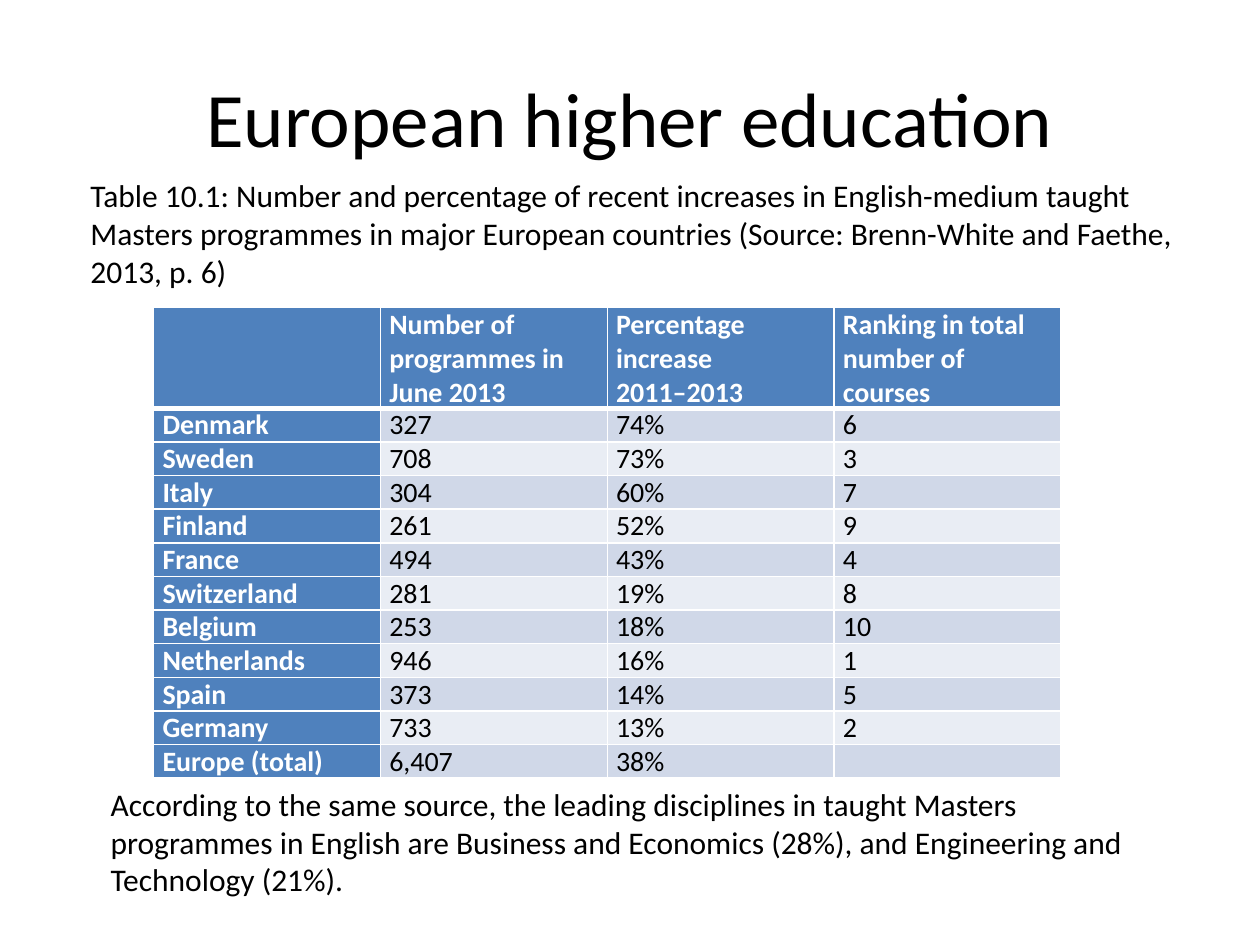
from copy import deepcopy

from lxml.etree import SubElement
from pptx import Presentation
from pptx.dml.color import RGBColor
from pptx.enum.text import MSO_ANCHOR, PP_ALIGN
from pptx.oxml.ns import qn
from pptx.util import Inches, Pt

BLACK = RGBColor(0x00, 0x00, 0x00)
WHITE = RGBColor(0xFF, 0xFF, 0xFF)
BLUE = RGBColor(0x4F, 0x81, 0xBD)
BANDS = RGBColor(0xD0, 0xD8, 0xE8), RGBColor(0xE9, 0xED, 0xF4)
FONT = "Calibri"

TITLE = "European higher education"
CAPTION = (
    "Table 10.1: Number and percentage of recent increases in English-medium taught "
    "Masters programmes in major European countries (Source: Brenn-White and Faethe, 2013, p. 6)"
)
CONCLUSION = (
    "According to the same source, the leading disciplines in taught Masters programmes "
    "in English are Business and Economics (28%), and Engineering and Technology (21%)."
)
# In cell text, \n starts a paragraph and \v breaks a line.
ROWS = [
    ("", "Number of programmes in\nJune 2013", "Percentage increase\v2011–2013",
     "Ranking in total number of courses"),
    ("Denmark", "327", "74%", "6"),
    ("Sweden", "708", "73%", "3"),
    ("Italy", "304", "60%", "7"),
    ("Finland", "261", "52%", "9"),
    ("France", "494", "43%", "4"),
    ("Switzerland", "281", "19%", "8"),
    ("Belgium", "253", "18%", "10"),
    ("Netherlands", "946", "16%", "1"),
    ("Spain", "373", "14%", "5"),
    ("Germany", "733", "13%", "2"),
    ("Europe (total)", "6,407", "38%", ""),
]
TABLE_LEFT, TABLE_TOP, TABLE_HEIGHT = 1.22, 2.44, 3.73
COLUMN_WIDTH, HEADER_HEIGHT = 1.8, 0.79


def write_text(frame, text, size=18, color=BLACK, bold=False, align=PP_ALIGN.LEFT):
    frame.word_wrap = True
    for index, line in enumerate(text.split("\n")):
        paragraph = frame.add_paragraph() if index else frame.paragraphs[0]
        paragraph.text = line
        paragraph.alignment = align
        for run in paragraph.runs:
            run.font.name = FONT
            run.font.size = Pt(size)
            run.font.bold = bold
            run.font.color.rgb = color
        for line_break in paragraph._p.findall(qn("a:br")):
            line_break.append(deepcopy(paragraph.runs[0].font._element))
        if not line:
            SubElement(paragraph._p, qn("a:endParaRPr"), sz=str(size * 100))


def add_text(slide, left, top, width, height, text, anchor=MSO_ANCHOR.TOP, **text_format):
    box = slide.shapes.add_textbox(Inches(left), Inches(top), Inches(width), Inches(height))
    write_text(box.text_frame, text, **text_format)
    box.text_frame.vertical_anchor = anchor


def set_borders(cell, **widths):
    """Draw white borders; widths are points keyed by side (L, R, T, B)."""
    properties = cell._tc.get_or_add_tcPr()
    for index, (side, width) in enumerate(widths.items()):
        line = properties.makeelement(qn(f"a:ln{side}"), w=str(Pt(width)))
        fill = SubElement(line, qn("a:solidFill"))
        SubElement(fill, qn("a:srgbClr"), val=str(WHITE))
        properties.insert(index, line)


def add_table(slide):
    row_count, column_count = len(ROWS), len(ROWS[0])
    table = slide.shapes.add_table(
        row_count, column_count, Inches(TABLE_LEFT), Inches(TABLE_TOP),
        Inches(COLUMN_WIDTH * column_count), Inches(TABLE_HEIGHT),
    ).table
    table.first_col = True
    body_height = (TABLE_HEIGHT - HEADER_HEIGHT) / (row_count - 1)
    for column in table.columns:
        column.width = Inches(COLUMN_WIDTH)
    for row_index, values in enumerate(ROWS):
        table.rows[row_index].height = Inches(body_height if row_index else HEADER_HEIGHT)
        for column_index, value in enumerate(values):
            cell = table.cell(row_index, column_index)
            heading = row_index == 0 or column_index == 0
            cell.margin_left = cell.margin_right = Inches(0.07)
            cell.margin_top = cell.margin_bottom = 0
            cell.fill.solid()
            cell.fill.fore_color.rgb = BLUE if heading else BANDS[(row_index - 1) % 2]
            write_text(cell.text_frame, value, size=16, bold=heading,
                       color=WHITE if heading else BLACK)
            set_borders(cell, L=1, R=1, T=3 if row_index == 1 else 1,
                        B=1 if row_index else 3)


def main():
    presentation = Presentation()
    presentation.slide_width, presentation.slide_height = Inches(10), Inches(7.5)
    slide = presentation.slides.add_slide(presentation.slide_layouts[6])
    add_text(slide, 0.5, 0.3, 9, 1.25, TITLE, size=44,
             align=PP_ALIGN.CENTER, anchor=MSO_ANCHOR.MIDDLE)
    add_text(slide, 0.62, 1.35, 9.06, 1.01, CAPTION)
    add_table(slide)
    add_text(slide, 0.78, 6.18, 8.72, 1.01, CONCLUSION)
    presentation.save("out.pptx")


if __name__ == "__main__":
    main()
